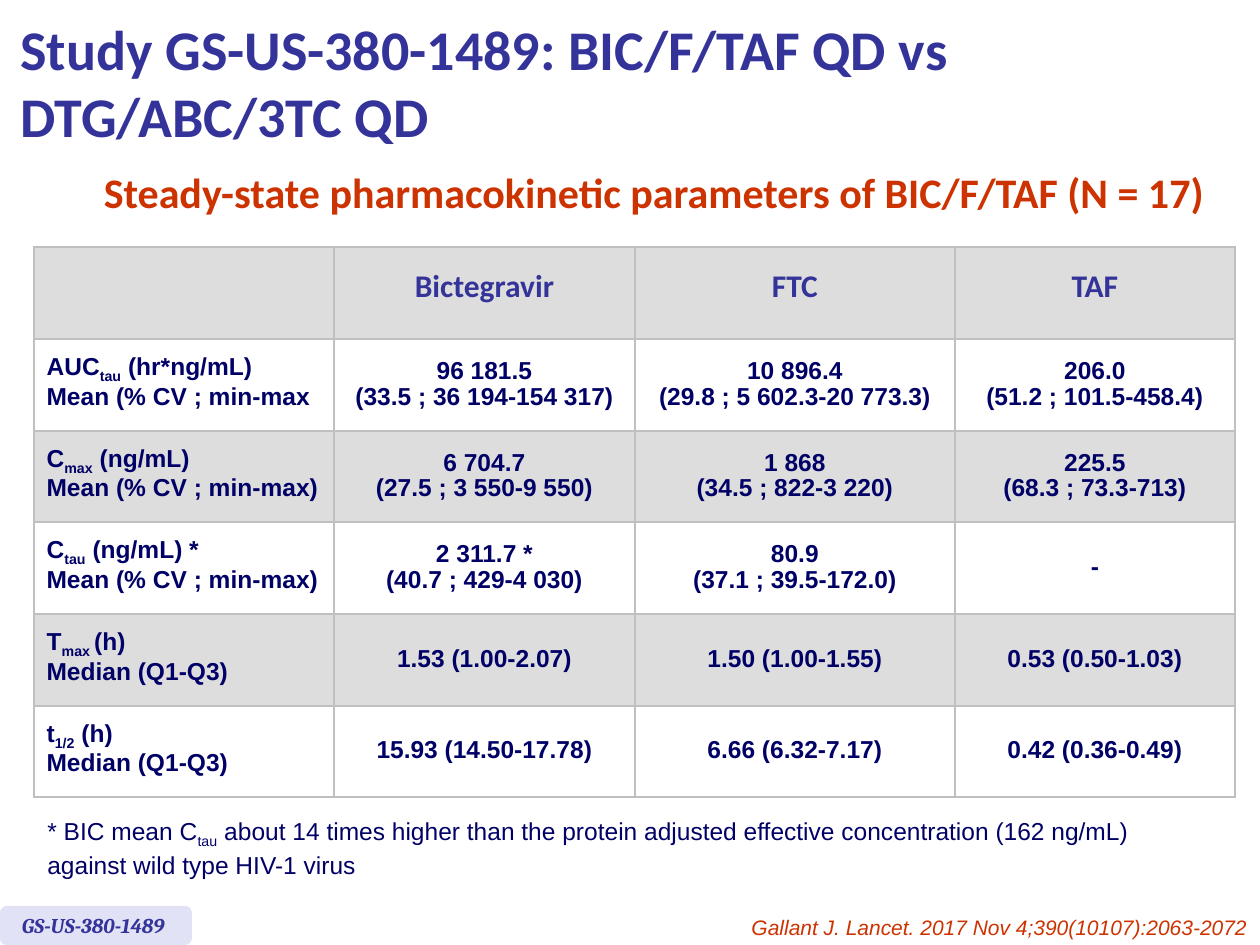
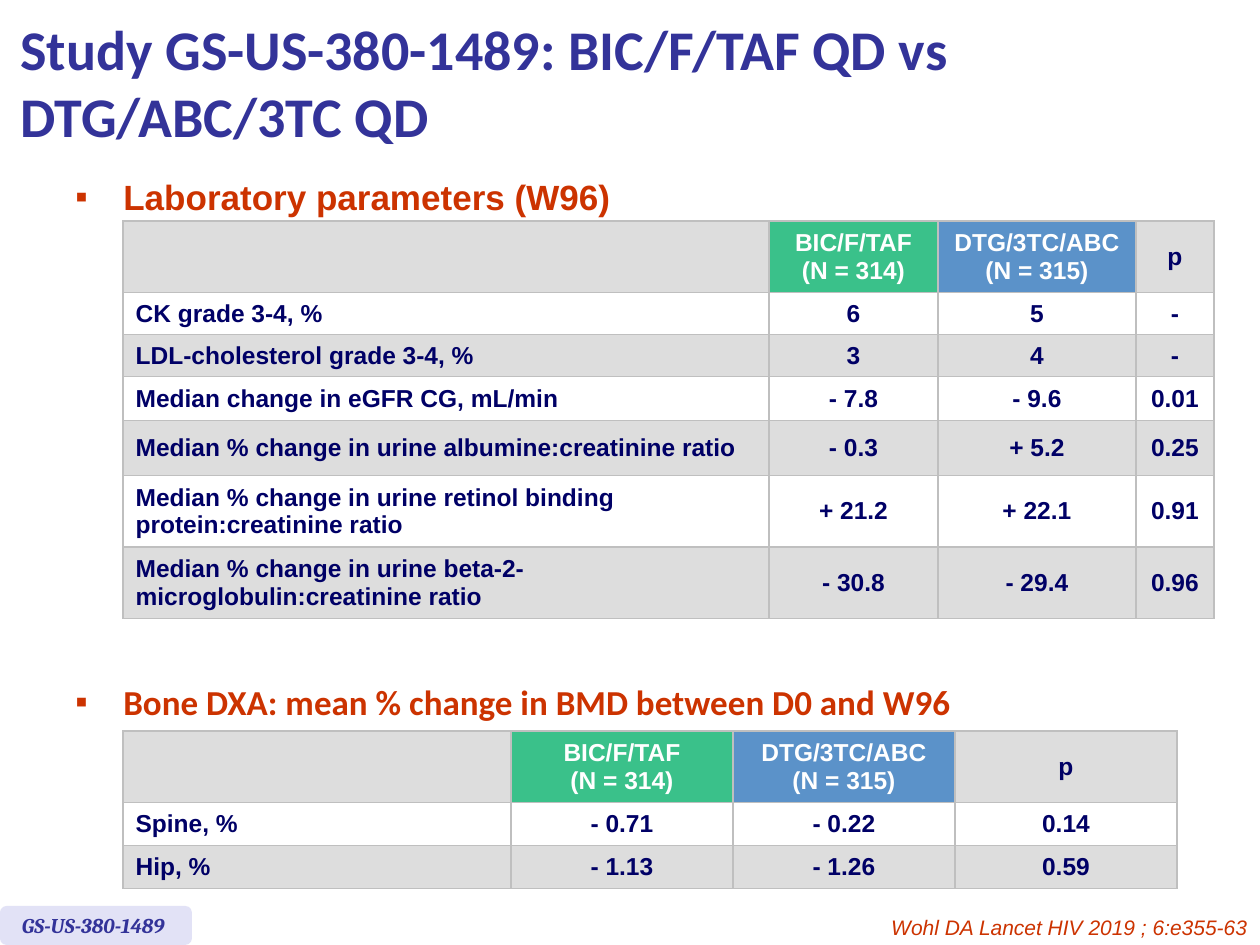
from dataclasses import dataclass

from lxml.etree import SubElement
from pptx import Presentation
from pptx.dml.color import RGBColor
from pptx.enum.shapes import MSO_SHAPE
from pptx.enum.text import MSO_ANCHOR, PP_ALIGN
from pptx.oxml.ns import qn
from pptx.util import Emu, Pt

PX_PER_INCH = 126


def px(length):
    return Emu(round(length * 914400 / PX_PER_INCH))


def style(name, size, color, bold=False, italic=False):
    return {"name": name, "size": Pt(size), "bold": bold, "italic": italic, "color": color}


@dataclass(frozen=True)
class Theme:
    white: str = "FFFFFF"
    band: str = "DDDDDD"
    tag: str = "E2E2F6"
    indigo: str = "333399"
    navy: str = "000066"
    rust: str = "CC3300"
    green: str = "3AC18A"
    blue: str = "5B92C9"
    grid_pharmacokinetics: str = "C0C0C0"
    grid_results: str = "BFBFBF"


THEME = Theme()
STYLES = {
    "title": style("Calibri", 32, THEME.indigo, bold=True),
    "subtitle": style("Calibri", 24, THEME.rust, bold=True),
    "heading": style("Arial", 20, THEME.rust, bold=True),
    "heading_calibri": style("Calibri", 20, THEME.rust, bold=True),
    "drug": style("Calibri", 18, THEME.indigo, bold=True),
    "cell": style("Arial", 14, THEME.navy, bold=True),
    "arm": style("Arial", 14, THEME.white, bold=True),
    "note": style("Arial", 14, THEME.navy),
    "tag": style("Cambria", 12, THEME.indigo, bold=True, italic=True),
    "citation": style("Arial", 12, THEME.rust, italic=True),
}

STUDY = "GS-US-380-1489"
TITLE = f"Study {STUDY}: BIC/F/TAF QD vs DTG/ABC/3TC QD"

PHARMACOKINETICS = [
    ["", "Bictegravir", "FTC", "TAF"],
    ["AUC~tau~ (hr*ng/mL)\nMean (% CV ; min-max", "96 181.5\n(33.5 ; 36 194-154 317)",
     "10 896.4\n(29.8 ; 5 602.3-20 773.3)", "206.0\n(51.2 ; 101.5-458.4)"],
    ["C~max~ (ng/mL)\nMean (% CV ; min-max)", "6 704.7\n(27.5 ; 3 550-9 550)",
     "1 868\n(34.5 ; 822-3 220)", "225.5\n(68.3 ; 73.3-713)"],
    ["C~tau~ (ng/mL) *\nMean (% CV ; min-max)", "2 311.7 *\n(40.7 ; 429-4 030)",
     "80.9\n(37.1 ; 39.5-172.0)", "-"],
    ["T~max ~(h)\nMedian (Q1-Q3)", "1.53 (1.00-2.07)", "1.50 (1.00-1.55)", "0.53 (0.50-1.03)"],
    ["t~1/2~ (h)\nMedian (Q1-Q3)", "15.93 (14.50-17.78)", "6.66 (6.32-7.17)",
     "0.42 (0.36-0.49)"],
]
ARMS = ["", "BIC/F/TAF\n(N = 314)", "DTG/3TC/ABC\n(N = 315)", "p"]
LABORATORY = [
    ARMS,
    ["CK grade 3-4, %", "6", "5", "-"],
    ["LDL-cholesterol grade 3-4, %", "3", "4", "-"],
    ["Median change in eGFR CG, mL/min", "- 7.8", "- 9.6", "0.01"],
    ["Median % change in urine albumine:creatinine ratio", "- 0.3", "+ 5.2", "0.25"],
    ["Median % change in urine retinol binding protein:creatinine ratio",
     "+ 21.2", "+ 22.1", "0.91"],
    ["Median % change in urine beta-2-microglobulin:creatinine ratio",
     "- 30.8", "- 29.4", "0.96"],
]
BONE = [
    ARMS,
    ["Spine, %", "- 0.71", "- 0.22", "0.14"],
    ["Hip, %", "- 1.13", "- 1.26", "0.59"],
]
DRUG_HEADER = [("drug", THEME.band)] * 4
ARM_HEADER = [("cell", THEME.band), ("arm", THEME.green), ("arm", THEME.blue),
              ("cell", THEME.band)]


# Text: lines become paragraphs, and parts between tildes are subscripts
def write(frame, text, style_name, align=PP_ALIGN.LEFT, spacing=None):
    formats = dict(STYLES[style_name])
    color = RGBColor.from_string(formats.pop("color"))
    for number, line in enumerate(text.split("\n")):
        para = frame.add_paragraph() if number else frame.paragraphs[0]
        para.alignment = align
        if spacing:
            para.line_spacing = Pt(spacing)
        for index, part in enumerate(line.split("~")):
            if not part:
                continue
            span = para.add_run()
            span.text = part
            for key, value in formats.items():
                setattr(span.font, key, value)
            span.font.color.rgb = color
            if index % 2:
                span._r.get_or_add_rPr().set("baseline", "-25000")


def add_text(page, box, text, style_name, anchor=MSO_ANCHOR.TOP, **layout):
    frame = page.shapes.add_textbox(*map(px, box)).text_frame
    frame.word_wrap = True
    frame.vertical_anchor = anchor
    write(frame, text, style_name, **layout)
    return frame


def add_heading(page, top, text, style_name):
    frame = add_text(page, (63, top, 1197, 48), text, style_name)
    properties = frame.paragraphs[0]._p.get_or_add_pPr()
    properties.set("marL", str(px(48)))
    properties.set("indent", str(-px(48)))
    bullet_color = SubElement(properties, qn("a:buClr"))
    SubElement(bullet_color, qn("a:srgbClr"), val=THEME.rust)
    SubElement(properties, qn("a:buFont"), typeface="Arial")
    SubElement(properties, qn("a:buChar"), char="▪")


# Tables: a styled header row, then rows banded white and grey
def set_borders(cell, color):
    properties = cell._tc.get_or_add_tcPr()
    for side in ("lnL", "lnR", "lnT", "lnB"):
        line = SubElement(properties, qn(f"a:{side}"), w=str(Pt(1)))
        fill = SubElement(line, qn("a:solidFill"))
        SubElement(fill, qn("a:srgbClr"), val=color)


def add_grid(page, corner, widths, heights, rows, header, grid_color, spacing=None):
    box = (*corner, sum(widths), sum(heights))
    table = page.shapes.add_table(len(rows), len(widths), *map(px, box)).table
    for column, width in zip(table.columns, widths):
        column.width = px(width)
    for row, height in zip(table.rows, heights):
        row.height = px(height)
    for row_index, texts in enumerate(rows):
        band = THEME.white if row_index % 2 else THEME.band
        for column_index, text in enumerate(texts):
            style_name, fill = ("cell", band) if row_index else header[column_index]
            cell = table.cell(row_index, column_index)
            cell.vertical_anchor = MSO_ANCHOR.MIDDLE
            set_borders(cell, grid_color)
            cell.fill.solid()
            cell.fill.fore_color.rgb = RGBColor.from_string(fill)
            align = PP_ALIGN.CENTER if column_index else PP_ALIGN.LEFT
            write(cell.text_frame, text, style_name, align, spacing)


# Shared frame: title, study tag and citation
def add_page(deck, citation):
    page = deck.slides.add_slide(deck.slide_layouts[6])
    add_text(page, (8, 6, 1068, 152), TITLE, "title", MSO_ANCHOR.MIDDLE)
    tag = page.shapes.add_shape(MSO_SHAPE.ROUNDED_RECTANGLE, *map(px, (0, 906, 192, 39)))
    tag.shadow.inherit = False
    tag.fill.solid()
    tag.fill.fore_color.rgb = RGBColor.from_string(THEME.tag)
    tag.line.fill.background()
    tag.text_frame.margin_left = px(20)
    tag.text_frame.vertical_anchor = MSO_ANCHOR.MIDDLE
    write(tag.text_frame, STUDY, "tag")
    add_text(page, (333, 908, 927, 38), citation, "citation", align=PP_ALIGN.RIGHT)
    return page


def add_pharmacokinetics_page(deck):
    page = add_page(deck, "Gallant J. Lancet. 2017 Nov 4;390(10107):2063-2072")
    add_text(page, (74, 171, 1160, 63),
             "Steady-state pharmacokinetic parameters of BIC/F/TAF (N = 17)",
             "subtitle", align=PP_ALIGN.CENTER, spacing=22.8)
    add_grid(page, (34, 247), [300, 301, 320, 280], [92, 92, 91] * 2,
             PHARMACOKINETICS, DRUG_HEADER, THEME.grid_pharmacokinetics, spacing=14.6)
    add_text(page, (35, 810, 1131, 72),
             "* BIC mean C~tau~ about 14 times higher than the protein adjusted effective "
             "concentration (162 ng/mL) against wild type HIV-1 virus", "note")


def add_results_page(deck):
    page = add_page(deck, "Wohl DA Lancet HIV 2019 ; 6:e355-63")
    add_heading(page, 169, "Laboratory parameters (W96)", "heading")
    add_grid(page, (123, 221), [646, 169, 198, 78], [68, 41, 40, 44, 55, 68, 68],
             LABORATORY, ARM_HEADER, THEME.grid_results)
    add_heading(page, 674, "Bone DXA: mean % change in BMD between D0 and W96",
                "heading_calibri")
    add_grid(page, (123, 731), [388] + [222] * 3, [68, 43, 43],
             BONE, ARM_HEADER, THEME.grid_results)


def main():
    deck = Presentation()
    deck.slide_width, deck.slide_height = px(1260), px(945)
    add_pharmacokinetics_page(deck)
    add_results_page(deck)
    deck.save("out.pptx")


if __name__ == "__main__":
    main()
